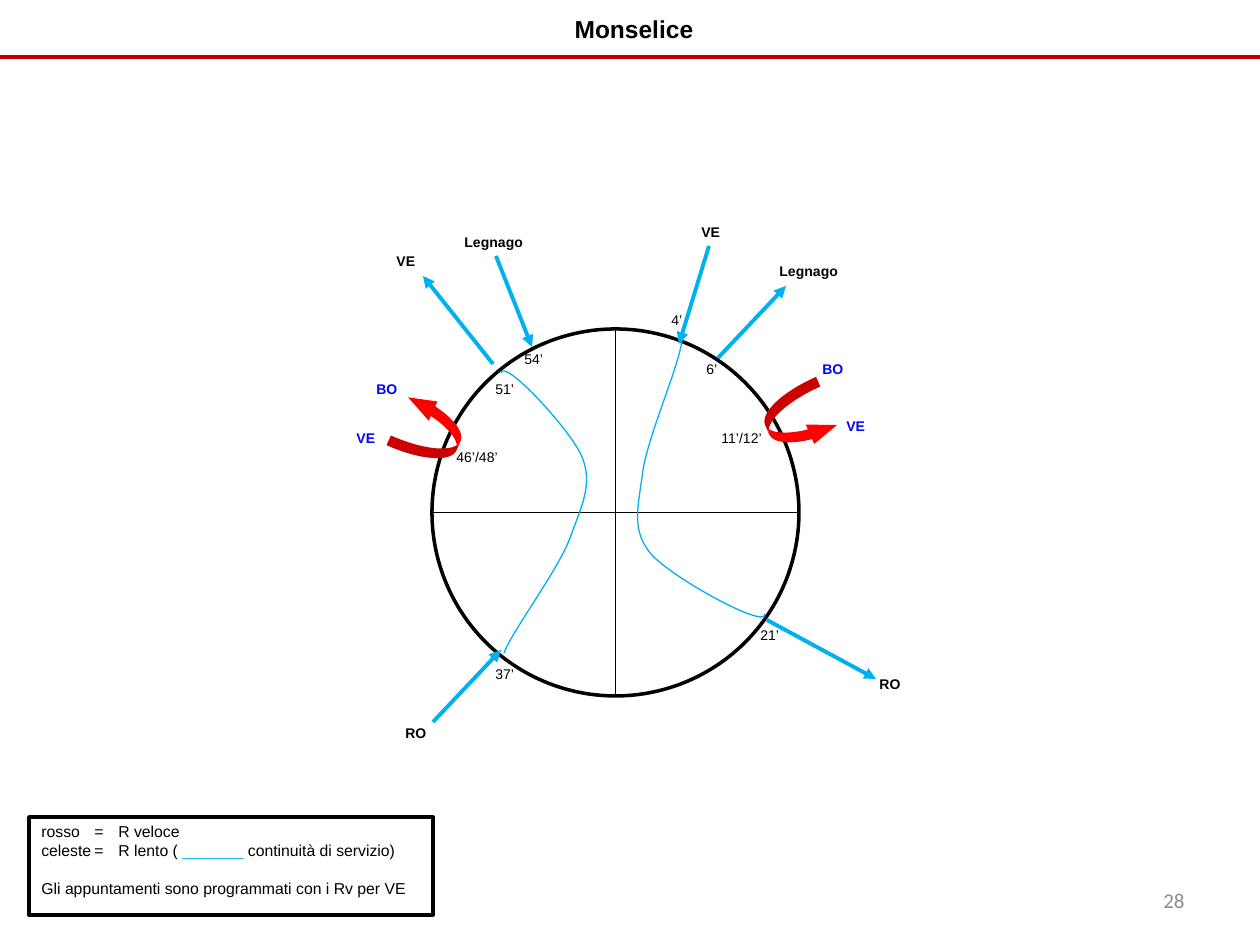
from dataclasses import dataclass

from lxml import etree
from pptx import Presentation
from pptx.dml.color import RGBColor
from pptx.enum.shapes import MSO_CONNECTOR, MSO_SHAPE
from pptx.enum.text import MSO_ANCHOR, MSO_AUTO_SIZE, PP_ALIGN
from pptx.oxml.ns import qn
from pptx.util import Emu, Pt

STRAIGHT = MSO_CONNECTOR.STRAIGHT
OVAL, RECT, LOOP = MSO_SHAPE.OVAL, MSO_SHAPE.RECTANGLE, MSO_SHAPE.CURVED_UP_ARROW
TOP, MIDDLE = MSO_ANCHOR.TOP, MSO_ANCHOR.MIDDLE
LEFT, CENTER, RIGHT = PP_ALIGN.LEFT, PP_ALIGN.CENTER, PP_ALIGN.RIGHT
GROW, FIXED = MSO_AUTO_SIZE.SHAPE_TO_FIT_TEXT, MSO_AUTO_SIZE.NONE
EMU_PER_PX = 914400 / 126


@dataclass(frozen=True)
class Theme:
    black: str = "000000"
    white: str = "FFFFFF"
    rule: str = "C00000"
    slow: str = "00B0F0"
    fast: str = "FF0000"
    fast_label: str = "0000FF"
    grey: str = "8C8C8C"
    font: str = "Arial"
    number_font: str = "Calibri"
    title: int = 14
    label: int = 8
    legend: int = 9
    number: int = 12


THEME = Theme()

# Places relative to the timetable box
ARROWS = [  # tail, tip
    ((156, 46), (192, 137)), ((378, 148), (446, 76)), ((369, 36), (339, 134)),
    ((427, 410), (536, 469)), ((93, 512), (161, 440)), ((153, 154), (83, 66)),
]
FAST_LOOPS = [(58, 187, 114.2), (427, 176, 246.4)]  # x, y, rotation
SERVICE_CURVES = [  # start, then three points for each Bézier segment
    [(342, 130), (340, 154), (308, 226), (303, 261), (298, 298), (291, 320),
     (311, 344), (332, 368), (427, 420), (425, 404)],
    [(164, 443), (172, 421), (217, 362), (230, 328), (242, 295), (253, 274),
     (242, 247), (231, 220), (163, 147), (161, 163)],
]
FAST_STOPS = [("VE", 4, 213), ("VE", 494, 201), ("BO", 24, 164), ("BO", 470, 144)]
SLOW_STOPS = [
    ("Legnago", 112, 17), ("Legnago", 427, 46), ("RO", 53, 508),
    ("VE", 44, 36), ("RO", 527, 459), ("VE", 349, 7),
]
MINUTES = [
    ("11’/12’", 369, 213), ("46’/48’", 104, 232), ("54’", 172, 134), ("6’", 354, 144),
    ("51’", 143, 164), ("4’", 319, 95), ("37’", 143, 449), ("21’", 408, 410),
]
STOP_WIDTHS = {"VE": 44, "BO": 50, "RO": 47, "Legnago": 84}
MINUTE_WIDTHS = {2: 43, 3: 49, 7: 68}  # by number of characters


def px(*lengths):
    return [Emu(round(length * EMU_PER_PX)) for length in lengths]


def apply(target, values):
    for name, value in values.items():
        setattr(target, name, value)


def write(paragraph, text, size, color=THEME.black, bold=False, font=THEME.font):
    run = paragraph.add_run()
    run.text = text
    apply(run.font, {"size": Pt(size), "bold": bold, "name": font})
    run.font.color.rgb = RGBColor.from_string(color)


def set_line(shape, color, width):
    shape.line.color.rgb = RGBColor.from_string(color)
    shape.line.width = Pt(width)


def set_fill(shape, color):
    shape.shadow.inherit = False
    shape.fill.solid()
    shape.fill.fore_color.rgb = RGBColor.from_string(color)


def add_line(slide, start, end, color, width, arrow=False):
    line = slide.shapes.add_connector(STRAIGHT, *px(*start, *end))
    set_line(line, color, width)
    if arrow:
        etree.SubElement(line.line._get_or_add_ln(), qn("a:tailEnd"), type="triangle")
    etree.SubElement(line._element.spPr, qn("a:effectLst"))


def add_curve(slide, points):
    start, *rest = points
    builder = slide.shapes.build_freeform(*start, scale=EMU_PER_PX)
    builder.add_line_segments(rest, close=False)
    curve = builder.convert_to_shape()
    curve.shadow.inherit = False
    curve.fill.background()
    set_line(curve, THEME.slow, 0.75)
    # Gather every three points into one cubic segment
    segments = list(curve._element.iter(qn("a:lnTo")))
    outline = segments[0].getparent()
    for first in range(0, len(segments), 3):
        cubic = etree.SubElement(outline, qn("a:cubicBezTo"))
        for segment in segments[first:first + 3]:
            cubic.append(segment[0])
            outline.remove(segment)


def add_label(slide, x, y, width, text, color=THEME.black, bold=False, wrap=True):
    frame = slide.shapes.add_textbox(*px(x, y, width, 30)).text_frame
    apply(frame, {"word_wrap": wrap, "auto_size": GROW})
    write(frame.paragraphs[0], text, THEME.label, color, bold)


def add_header(slide, x, y, width, height):
    title = slide.shapes.title
    apply(title, dict(zip(("left", "top", "width", "height"),
                          px(x + 67, y, width - 126, height))))
    apply(title.text_frame, {"vertical_anchor": MIDDLE, "word_wrap": True})
    heading = title.text_frame.paragraphs[0]
    heading.alignment = CENTER
    write(heading, "Monselice", THEME.title, bold=True)
    add_line(slide, (x, y + height), (x + width, y + height), THEME.rule, 2.25)


def add_timetable(slide, x, y):
    def place(point):
        return x + point[0], y + point[1]

    # Clock face with its two axes
    left, top = place((92, 119))
    size = 367
    middle = size / 2
    clock = slide.shapes.add_shape(OVAL, *px(left, top, size, size))
    set_fill(clock, THEME.white)
    color = clock._element.spPr.find(qn("a:solidFill"))[0]
    etree.SubElement(color, qn("a:alpha"), val="52000")
    set_line(clock, THEME.black, 2)
    add_line(slide, (left, top + middle), (left + size, top + middle), THEME.black, 0.75)
    add_line(slide, (left + middle, top), (left + middle, top + size), THEME.black, 0.75)

    # Fast trains
    for loop_x, loop_y, rotation in FAST_LOOPS:
        loop = slide.shapes.add_shape(LOOP, *px(*place((loop_x, loop_y)), 63, 66))
        set_fill(loop, THEME.fast)
        loop.line.fill.background()
        loop.rotation = rotation
        for index, value in enumerate((0.168, 0.334, 0.453)):
            loop.adjustments[index] = value
        for flip in ("flipH", "flipV"):
            loop._element.spPr.find(qn("a:xfrm")).set(flip, "1")

    # Slow trains and their through services
    for tail, tip in ARROWS:
        add_line(slide, place(tail), place(tip), THEME.slow, 2.25, arrow=True)
    for points in SERVICE_CURVES:
        add_curve(slide, [place(point) for point in points])

    # Destinations and minutes
    for stops, color in ((FAST_STOPS, THEME.fast_label), (SLOW_STOPS, THEME.black)):
        for stop, *point in stops:
            add_label(slide, *place(point), STOP_WIDTHS[stop], stop, color, True, False)
    for minute, *point in MINUTES:
        add_label(slide, *place(point), MINUTE_WIDTHS[len(minute)], minute)


def add_legend(slide, x, y, width, height):
    legend = slide.shapes.add_shape(RECT, *px(x, y, width, height))
    set_fill(legend, THEME.white)
    set_line(legend, THEME.black, 2)
    frame = legend.text_frame
    apply(frame, {"word_wrap": True, "auto_size": FIXED, "vertical_anchor": TOP,
                  "margin_top": px(5)[0]})
    rows = [
        [("rosso\t=\tR veloce", THEME.black)],
        [("celeste\t=\tR lento ( ", THEME.black), ("_______ ", THEME.slow),
         ("continuità di servizio)", THEME.black)],
        [("Gli appuntamenti sono programmati con i Rv per VE", THEME.black)],
    ]
    for index, row in enumerate(rows):
        paragraph = frame.add_paragraph() if index else frame.paragraphs[0]
        paragraph.alignment = LEFT
        if index == 2:
            paragraph.space_before = Pt(11)
        tabs = etree.SubElement(paragraph._p.get_or_add_pPr(), qn("a:tabLst"))
        for stop in px(53, 77):
            etree.SubElement(tabs, qn("a:tab"), pos=str(stop), algn="l")
        for text, color in row:
            write(paragraph, text, THEME.legend, color)


def add_page_number(slide, x, y, width, height):
    frame = slide.shapes.add_textbox(*px(x, y, width, height)).text_frame
    apply(frame, {"word_wrap": True, "vertical_anchor": MIDDLE})
    frame.paragraphs[0].alignment = RIGHT
    write(frame.paragraphs[0], "28", THEME.number, THEME.grey, font=THEME.number_font)


def main():
    prs = Presentation()
    prs.slide_width, prs.slide_height = px(1260, 945)
    slide = prs.slides.add_slide(prs.slide_layouts[5])
    add_header(slide, 0, 0, 1260, 57)
    add_timetable(slide, 340, 210)
    add_legend(slide, 29, 817, 404, 98)
    add_page_number(slide, 1131, 876, 66, 49)
    prs.save("out.pptx")


if __name__ == "__main__":
    main()
